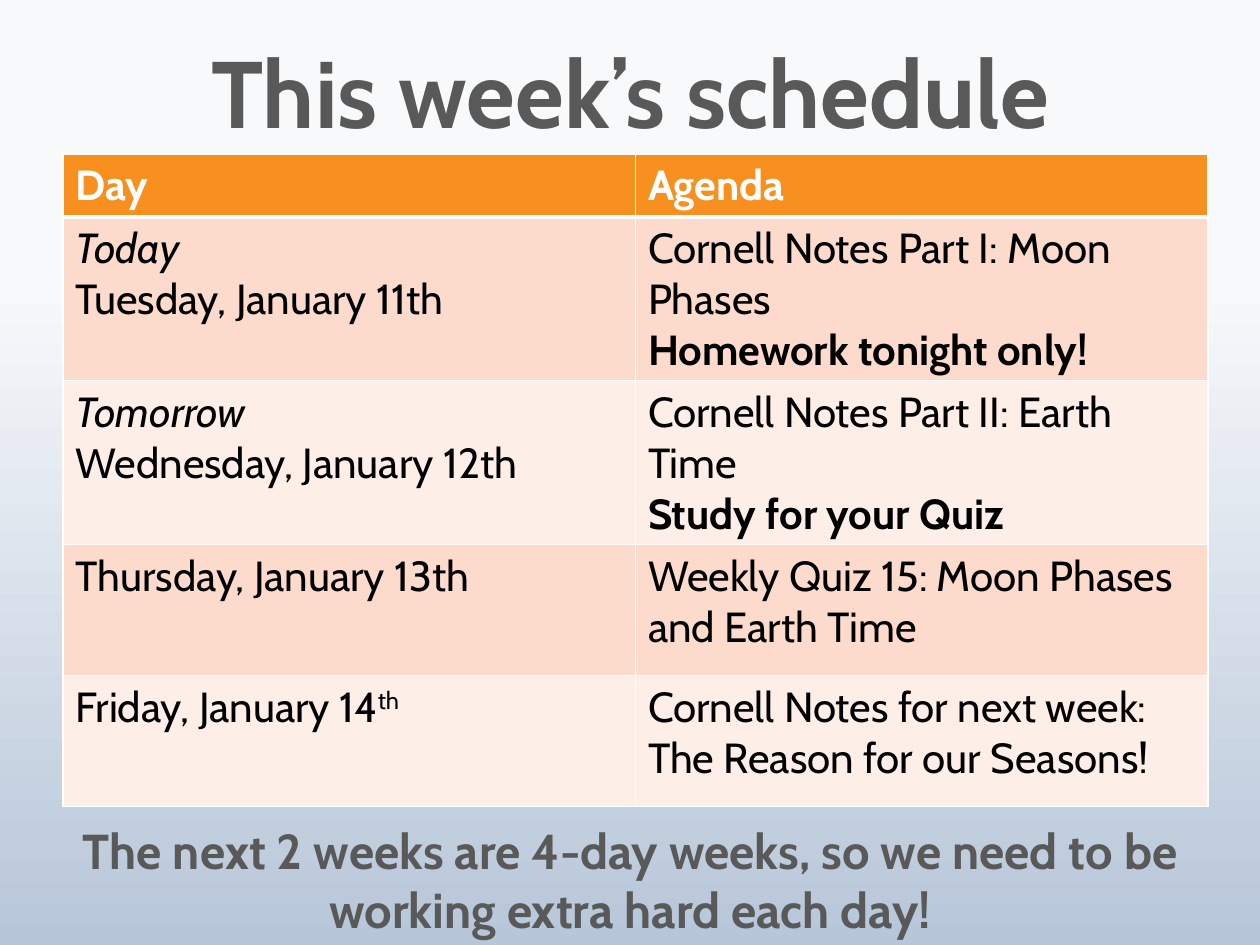
import pptx
import pptx.dml.color
import pptx.enum.text
import pptx.oxml
import pptx.oxml.ns
import pptx.util
from pptx.util import Cm

TITLE = "This week’s schedule"
REMINDER = "The next 2 weeks are 4-day weeks, so we need to be working extra hard each day!"
HEADINGS = ("Day", "Agenda")
SCHEDULE = [
    ([[("Today", "italic")], [("Tuesday, January 11th", "")]],
     [[("Cornell Notes Part I: Moon Phases", "")], [("Homework tonight only!", "bold")]]),
    ([[("Tomorrow", "italic")], [("Wednesday, January 12th", "")]],
     [[("Cornell Notes Part II: Earth Time", "")], [("Study for your Quiz", "bold")]]),
    ([[("Thursday, January 13th", "")]],
     [[("Weekly Quiz 15: Moon Phases and Earth Time", "")]]),
    ([[("Friday, January 14", ""), ("th", "super")]],
     [[("Cornell Notes for next week: The Reason for our Seasons!", "")]]),
]
FONT = "Cabin"
GREY, ORANGE, WHITE, BLACK = "595959", "F7901E", "FFFFFF", "000000"
BANDS = ("FCDBCD", "FDEEE8")
SKY = ((0.3, "F7F9FB"), (1, "B7C6D9"))


def color(value):
    return pptx.dml.color.RGBColor.from_string(value)


def style_run(run, size, ink, style=""):
    run.font.name = FONT
    run.font.size = pptx.util.Pt(size)
    run.font.color.rgb = color(ink)
    run.font.bold = style == "bold"
    run.font.italic = style == "italic"
    if style == "super":
        run.font._element.set("baseline", "30000")


def add_caption(slide, text, box, size, anchor):
    frame = slide.shapes.add_textbox(*map(Cm, box)).text_frame
    frame.word_wrap = True
    frame.vertical_anchor = anchor
    frame.text = text
    line = frame.paragraphs[0]
    line.alignment = pptx.enum.text.PP_ALIGN.CENTER
    style_run(line.runs[0], size, GREY, "bold")
    return line


def add_borders(cell, bottom):
    properties = cell._tc.get_or_add_tcPr()
    for side, points in (("L", 1), ("R", 1), ("T", 1), ("B", bottom)):
        properties.append(pptx.oxml.parse_xml(
            f'<a:ln{side} {pptx.oxml.ns.nsdecls("a")} w="{points * 12700}">'
            f'<a:solidFill><a:srgbClr val="{WHITE}"/></a:solidFill></a:ln{side}>'))


def fill_cell(cell, lines, background, ink, bottom=1):
    add_borders(cell, bottom)
    cell.fill.solid()
    cell.fill.fore_color.rgb = color(background)
    frame = cell.text_frame
    for index, pieces in enumerate(lines):
        line = frame.add_paragraph() if index else frame.paragraphs[0]
        for text, style in pieces:
            run = line.add_run()
            run.text = text
            style_run(run, 24, ink, style)


def add_schedule(slide):
    table = slide.shapes.add_table(
        len(SCHEDULE) + 1, len(HEADINGS), Cm(1.27), Cm(3.1), Cm(23.08), Cm(11.8)).table
    for column in table.columns:
        column.width = Cm(11.54)
    for index, row in enumerate(table.rows):
        row.height = Cm(2.64 if index else 1.24)
    for column, heading in enumerate(HEADINGS):
        fill_cell(table.cell(0, column), [[(heading, "bold")]], ORANGE, WHITE, 3)
    for row, entry in enumerate(SCHEDULE):
        for column, lines in enumerate(entry):
            fill_cell(table.cell(row + 1, column), lines, BANDS[row % 2], BLACK)


def main():
    deck = pptx.Presentation()
    deck.slide_width, deck.slide_height = Cm(25.4), Cm(19.05)
    slide = deck.slides.add_slide(deck.slide_layouts[6])
    sky = slide.background.fill
    sky.gradient()
    sky.gradient_angle = 270
    for stop, (position, value) in zip(sky.gradient_stops, SKY):
        stop.position = position
        stop.color.rgb = color(value)
    anchors = pptx.enum.text.MSO_ANCHOR
    title = add_caption(slide, TITLE, (2.54, 0.23, 20.32, 3.5), 54, anchors.MIDDLE)
    title.line_spacing = pptx.util.Pt(56)
    add_schedule(slide)
    add_caption(slide, REMINDER, (0, 16.41, 25.4, 3.84), 28, anchors.TOP)
    deck.save("out.pptx")


if __name__ == "__main__":
    main()
